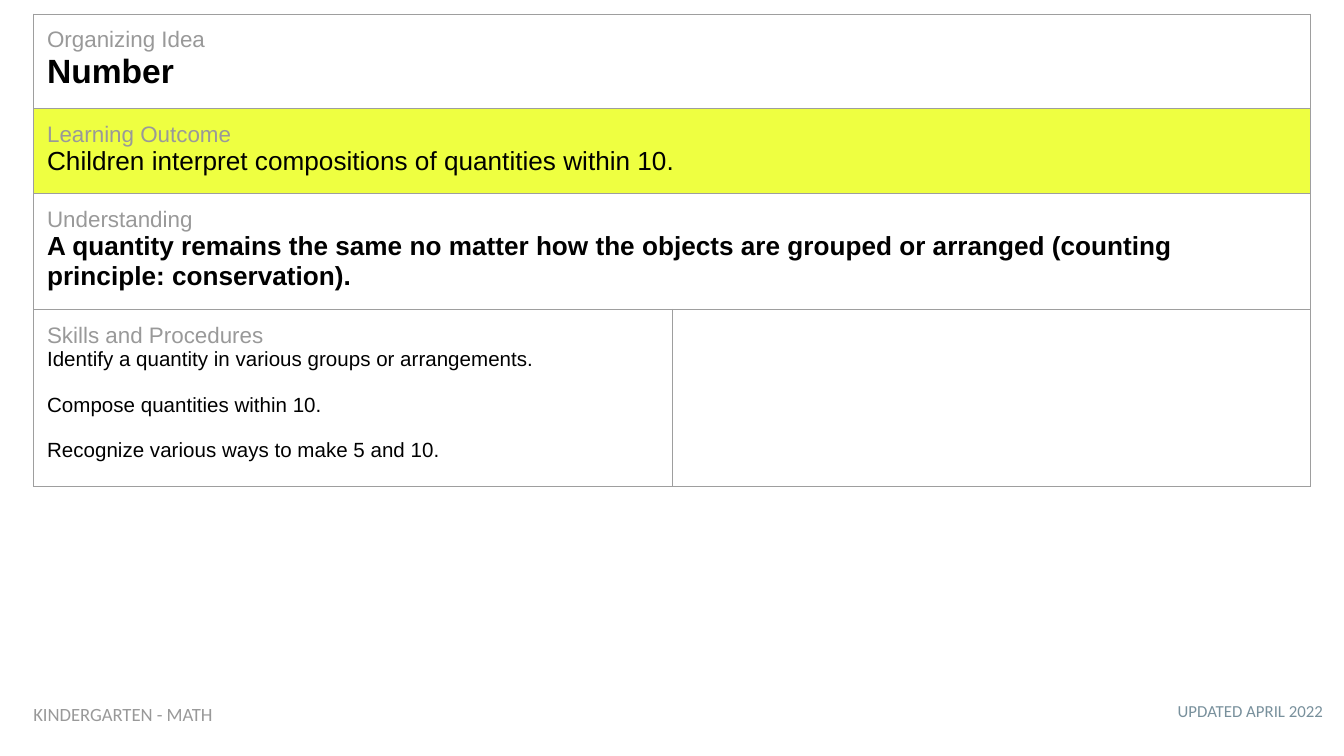
from lxml.etree import SubElement
from pptx import Presentation
from pptx.dml.color import RGBColor
from pptx.enum.text import PP_ALIGN as Align
from pptx.oxml.ns import qn
from pptx.util import Cm, Pt

GREY, BLACK, WHITE, LIME = "999999", "000000", "FFFFFF", "EEFF41"
BORDER, SLATE = "9E9E9E", "78909C"
INSET = Cm(0.25)
LABEL = {"size": Pt(12), "bold": False}

# label, statements, text format, fill, row height in cm
ROWS = [
    ("Organizing Idea", ["Number"],
     {"size": Pt(18), "bold": True}, WHITE, 1.78),
    ("Learning Outcome",
     ["Children interpret compositions of quantities within 10."],
     {"size": Pt(14), "bold": False}, LIME, 1.61),
    ("Understanding",
     ["A quantity remains the same no matter how the objects are grouped "
      "or arranged (counting principle: conservation)."],
     {"size": Pt(14), "bold": True}, WHITE, 2.19),
    ("Skills and Procedures",
     ["Identify a quantity in various groups or arrangements.",
      "Compose quantities within 10.",
      "Recognize various ways to make 5 and 10."],
     {"size": Pt(11), "bold": False}, WHITE, 3.35),
]


def color(value):
    return RGBColor.from_string(value)


def set_values(target, values):
    for name, value in values.items():
        setattr(target, name, value)


def write(paragraph, text, font_color, font_format, font_name="Arial"):
    run = paragraph.add_run()
    run.text = text
    set_values(run.font, {"name": font_name, **font_format})
    run.font.color.rgb = color(font_color)


def style_cell(cell, fill):
    set_values(cell, {f"margin_{side}": INSET
                      for side in ("left", "right", "top", "bottom")})
    properties = cell._tc.get_or_add_tcPr()
    for side in ("lnL", "lnR", "lnT", "lnB"):
        line = SubElement(properties, qn(f"a:{side}"), w=str(Pt(0.75)))
        solid = SubElement(line, qn("a:solidFill"))
        SubElement(solid, qn("a:srgbClr"), val=BORDER)
    cell.fill.solid()
    cell.fill.fore_color.rgb = color(fill)


def fill_cell(cell, label, statements, font_format):
    frame = cell.text_frame
    write(frame.paragraphs[0], label, GREY, LABEL)
    for index, statement in enumerate(statements):
        paragraph = frame.add_paragraph()
        if index:
            paragraph.space_before = Pt(12.3)
        write(paragraph, statement, BLACK, font_format)


def add_outcome_table(slide):
    height = sum(row[-1] for row in ROWS)
    table = slide.shapes.add_table(len(ROWS), 2, Cm(0.64), Cm(0.27),
                                   Cm(24.13), Cm(height)).table
    set_values(table, {"first_row": False, "horz_banding": False})
    for index, (label, statements, font_format, fill, height) in enumerate(ROWS):
        table.rows[index].height = Cm(height)
        left, right = table.cell(index, 0), table.cell(index, 1)
        for cell in (left, right):
            style_cell(cell, fill)
        # Only the last row keeps its two columns
        if index < len(ROWS) - 1:
            left.merge(right)
        fill_cell(left, label, statements, font_format)


def add_footer(slide, text, position, size, font_color, align):
    frame = slide.shapes.add_textbox(*map(Cm, position)).text_frame
    set_values(frame, {"word_wrap": True, "margin_left": INSET,
                       "margin_right": INSET, "margin_top": INSET,
                       "margin_bottom": INSET})
    paragraph = frame.paragraphs[0]
    paragraph.alignment = align
    write(paragraph, text, font_color, {"size": Pt(size)}, "Calibri")


def main():
    presentation = Presentation()
    set_values(presentation, {"slide_width": Cm(25.4),
                              "slide_height": Cm(14.29)})
    slide = presentation.slides.add_slide(presentation.slide_layouts[6])

    # Curriculum table
    add_outcome_table(slide)

    # Footers
    add_footer(slide, "UPDATED APRIL 2022", (18.39, 13.06, 6.86, 0.89),
               9, SLATE, Align.RIGHT)
    add_footer(slide, "KINDERGARTEN - MATH", (0.38, 13.08, 7.65, 0.94),
               10, GREY, Align.LEFT)
    presentation.save("out.pptx")


if __name__ == "__main__":
    main()
